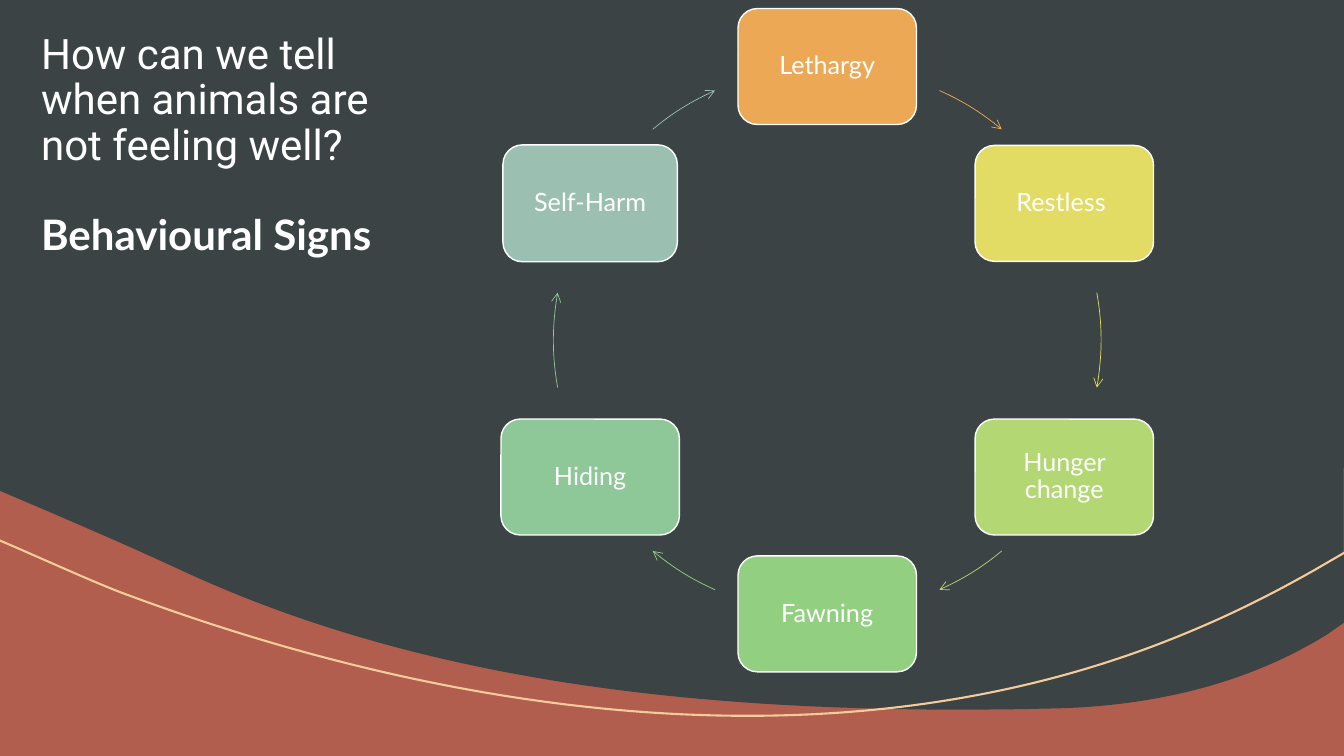
from math import cos, radians, sin, tan

from lxml.etree import SubElement
from pptx import Presentation
from pptx.dml.color import RGBColor
from pptx.enum.shapes import MSO_SHAPE
from pptx.enum.text import MSO_ANCHOR, PP_ALIGN
from pptx.oxml.ns import qn
from pptx.util import Inches, Pt

COLORS = {
    "clay": "B15E4E", "slate": "3B4345", "sand": "F4CB99", "white": "FFFFFF",
    "orange": "ECA855", "yellow": "E2DC64", "lime": "B3D873",
    "green": "93CF81", "mint": "8EC798", "teal": "9BBFB0",
}

# Clockwise from the top: label, colour, width, height
SIGNS = [
    ("Lethargy", "orange", 1.77, 1.15),
    ("Restless ", "yellow", 1.77, 1.15),
    ("Hunger change", "lime", 1.77, 1.15),
    ("Fawning", "green", 1.77, 1.15),
    ("Hiding", "mint", 1.77, 1.15),
    ("Self-Harm", "teal", 1.73, 1.16),
]

# Arrow start and end in degrees clockwise from the top, for half a turn
ARROW_ANGLES = [(24.2, 39.6), (80, 100), (140.4, 155.8)]

# Each step is one point (straight) or three points (Bezier curve)
PANEL = [
    [(0, 0)], [(13.34, 0)], [(13.34, 6.17)], [(13.17, 6.29)],
    [(12.32, 6.82), (11.33, 7.02), (10.37, 7.03)],
    [(10.02, 7.04), (9.66, 7.04), (9.3, 7.04)],
    [(6.77, 7.02), (4.14, 6.75), (1.78, 5.65)],
    [(1.35, 5.45), (0.91, 5.26), (0.47, 5.07)], [(0, 4.87)],
]
SWOOSH = [
    [(13.34, 4.64)], [(13.34, 5.48)], [(13.03, 5.66)],
    [(12.64, 5.88), (12.2, 6.11), (11.62, 6.34)],
    [(8.41, 7.62), (4.65, 7.16), (1.26, 5.9)],
    [(0.98, 5.8), (0.37, 5.52), (-0.03, 5.35)],
]


def rgb(name):
    return RGBColor.from_string(COLORS[name])


def paint(sp, fill=None, line=None, width=1):
    sp.shadow.inherit = False
    for part, color in ((sp.fill, fill), (sp.line.fill, line)):
        if color:
            part.solid()
            part.fore_color.rgb = rgb(color)
        else:
            part.background()
    if line:
        sp.line.width = Pt(width)


def add_outline(s, x, y, w, h, steps, close=False, **style):
    """Draw straight and curved steps in a freeform that fills the given box."""
    builder = s.shapes.build_freeform(Inches(x), Inches(y))
    builder.add_line_segments([(Inches(x + w), Inches(y)),
                               (Inches(x + w), Inches(y + h))], close=False)
    sp = builder.convert_to_shape()
    outline = sp.element.find(".//" + qn("a:path"))
    for child in list(outline):
        outline.remove(child)
    for i, step in enumerate(steps):
        tag = "a:moveTo" if i == 0 else "a:lnTo" if len(step) == 1 else "a:cubicBezTo"
        node = SubElement(outline, qn(tag))
        for px, py in step:
            SubElement(node, qn("a:pt"), x=str(Inches(px - x)), y=str(Inches(py - y)))
    if close:
        SubElement(outline, qn("a:close"))
    paint(sp, **style)
    return sp


def add_text(p, text, **font):
    p.line_spacing = 0.9
    r = p.add_run()
    r.text = text
    r.font.color.rgb = rgb("white")
    for key, value in font.items():
        setattr(r.font, key, value)


def set_frame(tf, inset_x, inset_y, anchor):
    frame = {
        "word_wrap": True, "vertical_anchor": anchor,
        "margin_left": Inches(inset_x), "margin_right": Inches(inset_x),
        "margin_top": Inches(inset_y), "margin_bottom": Inches(inset_y),
    }
    for key, value in frame.items():
        setattr(tf, key, value)


def add_backdrop(s):
    s.background.fill.solid()
    s.background.fill.fore_color.rgb = rgb("clay")
    add_outline(s, 0, 0, 13.34, 7.04, PANEL, close=True, fill="slate")
    add_outline(s, -0.03, 4.64, 13.37, 2.46, SWOOSH, line="sand", width=1.5)


def add_title(s, x, y, w, h):
    tf = s.shapes.add_textbox(Inches(x), Inches(y), Inches(w), Inches(h)).text_frame
    set_frame(tf, 0.1, 0.05, MSO_ANCHOR.TOP)
    add_text(tf.paragraphs[0], "How can we tell when animals are not feeling well?",
             name="Roboto", size=Pt(30))
    p = tf.add_paragraph()
    p.space_before = Pt(32)
    add_text(p, "Behavioural Signs", name="Lato", size=Pt(30), bold=True)


def add_cycle(s, x, y, size):
    """Boxes and arrows around the circle that fits the given square."""
    radius = size / 2

    def on_circle(angle, ahead=0):
        """Point on the circle, moved ahead along the tangent."""
        a = radians(angle)
        return (x + radius * (1 + sin(a) + ahead * cos(a)),
                y + radius * (1 - cos(a) + ahead * sin(a)))

    for i, (label, color, w, h) in enumerate(SIGNS):
        # Box
        bx, by = on_circle(60 * i)
        sp = s.shapes.add_shape(MSO_SHAPE.ROUNDED_RECTANGLE, Inches(bx - w / 2),
                                Inches(by - h / 2), Inches(w), Inches(h))
        paint(sp, fill=color, line="white")
        set_frame(sp.text_frame, 0.13, 0.13, MSO_ANCHOR.MIDDLE)
        p = sp.text_frame.paragraphs[0]
        p.alignment = PP_ALIGN.CENTER
        add_text(p, label, name="Lato", size=Pt(18))

        # Arrow to the next box
        start, end = (180 * (i // 3) + angle for angle in ARROW_ANGLES[i % 3])
        pull = 4 / 3 * tan(radians(end - start) / 4)
        arc = [[on_circle(start)],
               [on_circle(start, pull), on_circle(end, -pull), on_circle(end)]]
        arrow = add_outline(s, x, y, size, size, arc, line=color, width=0.5)
        SubElement(arrow.element.spPr.find(qn("a:ln")), qn("a:tailEnd"), type="arrow")


def main():
    prs = Presentation()
    prs.slide_width, prs.slide_height = Inches(13.33), Inches(7.5)
    s = prs.slides.add_slide(prs.slide_layouts[6])
    add_backdrop(s)
    add_title(s, 0.31, 0.28, 3.94, 2.5)
    add_cycle(s, 5.49, 0.66, 5.43)
    prs.save("out.pptx")


if __name__ == "__main__":
    main()
